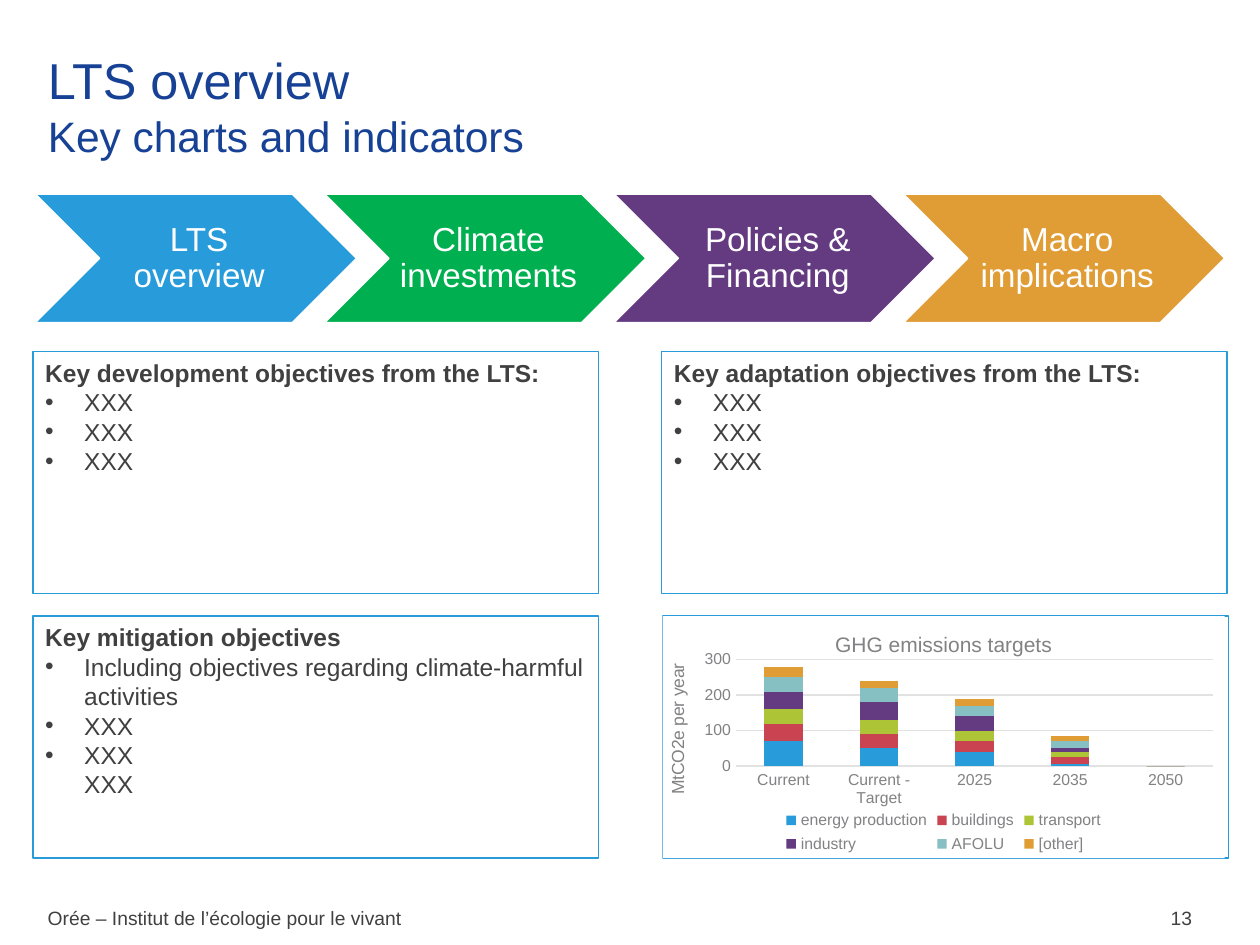
from copy import deepcopy

from lxml.etree import SubElement
from pptx import Presentation
from pptx.chart.data import CategoryChartData
from pptx.dml.color import RGBColor
from pptx.enum.chart import XL_CHART_TYPE as ChartType
from pptx.enum.chart import XL_LEGEND_POSITION as LegendPosition
from pptx.enum.chart import XL_TICK_MARK as TickMark
from pptx.enum.shapes import MSO_SHAPE as Preset
from pptx.enum.text import MSO_ANCHOR as Anchor
from pptx.enum.text import MSO_AUTO_SIZE as AutoSize
from pptx.enum.text import PP_ALIGN as Align
from pptx.oxml import parse_xml
from pptx.oxml.ns import nsdecls, qn
from pptx.util import Inches, Pt

COLORS = {
    "white": "FFFFFF", "text": "404041", "title": "174195", "muted": "828284",
    "grid": "E2E2E3", "blue": "289CDB", "green": "00B050", "purple": "643A81",
    "orange": "E09C35", "red": "C94450", "lime": "ACC435", "teal": "87C0C2",
}
STEPS = [("LTS overview", "blue"), ("Climate investments", "green"),
         ("Policies & Financing", "purple"), ("Macro implications", "orange")]
PANELS = [
    (0.26, 2.79, "Key development objectives from the LTS:", ["XXX"] * 3),
    (5.25, 2.79, "Key adaptation objectives from the LTS:", ["XXX"] * 3),
    (0.26, 4.89, "Key mitigation objectives",
     ["Including objectives regarding climate-harmful activities", "XXX", "XXX\nXXX"]),
    (5.26, 4.89, "", []),
]
PANEL_SIZE = (4.49, 1.92)
YEARS = ["Current", "Current - Target", "2025", "2035", "2050"]
EMISSIONS = [
    ("energy production", "blue", (70, 50, 40, 5, 0)),
    ("buildings", "red", (50, 40, 30, 20, 0)),
    ("transport", "lime", (40, 40, 30, 15, 0)),
    ("industry", "purple", (50, 50, 40, 10, 0)),
    ("AFOLU", "teal", (40, 40, 30, 20, 0)),
    ("[other]", "orange", (30, 20, 20, 15, 0)),
]
PLOT_LAYOUT = {"x": 0.13, "y": 0.18, "w": 0.85, "h": 0.44}


def rgb(name):
    """Return the named palette colour."""
    return RGBColor.from_string(COLORS[name])


def style_font(font, size, color, bold=False):
    """Apply the slide typeface with the given format."""
    for key, value in {"name": "Arial", "size": Pt(size), "bold": bold}.items():
        setattr(font, key, value)
    font.color.rgb = rgb(color)


def write(paragraph, text, size, color, bold=False):
    """Fill a paragraph, formatting its runs and line breaks."""
    paragraph.text = text
    for run in paragraph.runs:
        style_font(run.font, size, color, bold)
    for line_break in paragraph._p.findall(qn("a:br")):
        line_break.append(deepcopy(paragraph.runs[0]._r.rPr))


def add_bullet(paragraph):
    """Give a paragraph a round bullet with a hanging indent."""
    properties = paragraph._p.get_or_add_pPr()
    properties.set("marL", str(Inches(0.31)))
    properties.set("indent", str(Inches(-0.31)))
    SubElement(properties, qn("a:buFont"), typeface="Arial")
    SubElement(properties, qn("a:buChar"), char="•")


def add_title(slide, left, top, width, height):
    """Place the two-line heading in the title placeholder."""
    title = slide.shapes.title
    box = {"left": left, "top": top, "width": width, "height": height}
    for key, value in box.items():
        setattr(title, key, Inches(value))
    frame = title.text_frame
    frame.auto_size = AutoSize.NONE
    frame.vertical_anchor = Anchor.MIDDLE
    paragraph = frame.paragraphs[0]
    paragraph.alignment = Align.LEFT
    write(paragraph, "LTS overview\nKey charts and indicators", 28.8, "title")
    paragraph.runs[1].font.size = Pt(24.3)


def add_steps(slide, left, top, width, height):
    """Spread the chevrons evenly across the box."""
    step_width = 2.55
    pitch = (width - step_width) / (len(STEPS) - 1)
    for index, (label, color) in enumerate(STEPS):
        chevron = slide.shapes.add_shape(
            Preset.CHEVRON, Inches(left + index * pitch), Inches(top),
            Inches(step_width), Inches(height))
        chevron.shadow.inherit = False
        chevron.fill.solid()
        chevron.fill.fore_color.rgb = rgb(color)
        chevron.line.color.rgb = rgb("white")
        chevron.line.width = Pt(0.85)
        frame = chevron.text_frame
        frame.word_wrap = True
        frame.vertical_anchor = Anchor.MIDDLE
        margins = {"left": 0.08, "top": 0.03, "right": 0.03, "bottom": 0.03}
        for side, value in margins.items():
            setattr(frame, f"margin_{side}", Inches(value))
        paragraph = frame.paragraphs[0]
        paragraph.alignment = Align.CENTER
        paragraph.line_spacing = 0.9
        write(paragraph, label, 19, "white")


def add_panel(slide, left, top, width, height, heading, bullets):
    """Draw an outlined panel with an optional heading and bullets."""
    panel = slide.shapes.add_shape(
        Preset.RECTANGLE, Inches(left), Inches(top), Inches(width), Inches(height))
    panel.shadow.inherit = False
    panel.fill.background()
    panel.line.color.rgb = rgb("blue")
    panel.line.width = Pt(1)
    if not heading:
        return
    frame = panel.text_frame
    frame.word_wrap = True
    frame.vertical_anchor = Anchor.TOP
    write(frame.paragraphs[0], heading, 14, "text", bold=True)
    for bullet in bullets:
        paragraph = frame.add_paragraph()
        write(paragraph, bullet, 14, "text")
        add_bullet(paragraph)
    for paragraph in frame.paragraphs:
        paragraph.alignment = Align.LEFT


def format_axes(chart):
    """Style both axes and the value axis title."""
    for axis in (chart.category_axis, chart.value_axis):
        axis.major_tick_mark = axis.minor_tick_mark = TickMark.NONE
        style_font(axis.tick_labels.font, 9, "muted")
    values = chart.value_axis
    values.format.line.fill.background()
    for line in (chart.category_axis.format.line, values.major_gridlines.format.line):
        line.color.rgb = rgb("grid")
        line.width = Pt(0.75)
    write(values.axis_title.text_frame.paragraphs[0], "MtCO2e per year", 10, "muted")


def set_chart_area(chart):
    """Fix the inner plot area and give the chart a white ground."""
    plot_area = chart._chartSpace.chart.plotArea
    for layout in plot_area.findall(qn("c:layout")):
        plot_area.remove(layout)
    modes = '<c:xMode val="edge"/><c:yMode val="edge"/>'
    values = "".join(f'<c:{key} val="{value}"/>' for key, value in PLOT_LAYOUT.items())
    plot_area.insert(0, parse_xml(
        f'<c:layout {nsdecls("c")}><c:manualLayout><c:layoutTarget val="inner"/>'
        f'{modes}{values}</c:manualLayout></c:layout>'))
    chart._chartSpace.chart.addnext(parse_xml(
        f'<c:spPr {nsdecls("c", "a")}><a:solidFill><a:srgbClr val="{COLORS["white"]}"/>'
        '</a:solidFill><a:ln><a:noFill/></a:ln></c:spPr>'))


def add_emissions_chart(slide, left, top, width, height):
    """Add the stacked column chart of emissions by sector."""
    data = CategoryChartData()
    data.categories = YEARS
    for name, _, values in EMISSIONS:
        data.add_series(name, values)
    chart = slide.shapes.add_chart(
        ChartType.COLUMN_STACKED, Inches(left), Inches(top),
        Inches(width), Inches(height), data).chart
    style_font(chart.font, 10, "text")
    write(chart.chart_title.text_frame.paragraphs[0], "GHG emissions targets", 12, "muted")
    chart.has_legend = True
    chart.legend.position = LegendPosition.BOTTOM
    chart.legend.include_in_layout = False
    style_font(chart.legend.font, 9, "muted")
    plot = chart.plots[0]
    for key, value in {"gap_width": 150, "overlap": 100, "vary_by_categories": False}.items():
        setattr(plot, key, value)
    for series, (_, color, _) in zip(plot.series, EMISSIONS):
        series.format.fill.solid()
        series.format.fill.fore_color.rgb = rgb(color)
    format_axes(chart)
    set_chart_area(chart)


def add_footer_text(slide, left, top, width, height, text, alignment):
    """Add one plain footer line."""
    box = slide.shapes.add_textbox(Inches(left), Inches(top), Inches(width), Inches(height))
    box.text_frame.word_wrap = True
    paragraph = box.text_frame.paragraphs[0]
    paragraph.alignment = alignment
    write(paragraph, text, 11, "text")


def main():
    """Build and save the slide."""
    presentation = Presentation()
    presentation.slide_width, presentation.slide_height = Inches(10), Inches(7.5)
    slide = presentation.slides.add_slide(presentation.slide_layouts[5])
    add_title(slide, 0.28, 0.44, 9.45, 0.79)
    add_steps(slide, 0.28, 1.54, 9.44, 1.02)
    for left, top, heading, bullets in PANELS:
        add_panel(slide, left, top, *PANEL_SIZE, heading, bullets)
    add_emissions_chart(slide, 5.26, 4.89, 4.46, 1.92)
    credit = "Orée – Institut de l’écologie pour le vivant"
    add_footer_text(slide, 0.28, 7.14, 3.39, 0.29, credit, Align.LEFT)
    add_footer_text(slide, 8.78, 7.14, 0.78, 0.29, "13", Align.RIGHT)
    presentation.save("out.pptx")


if __name__ == "__main__":
    main()
